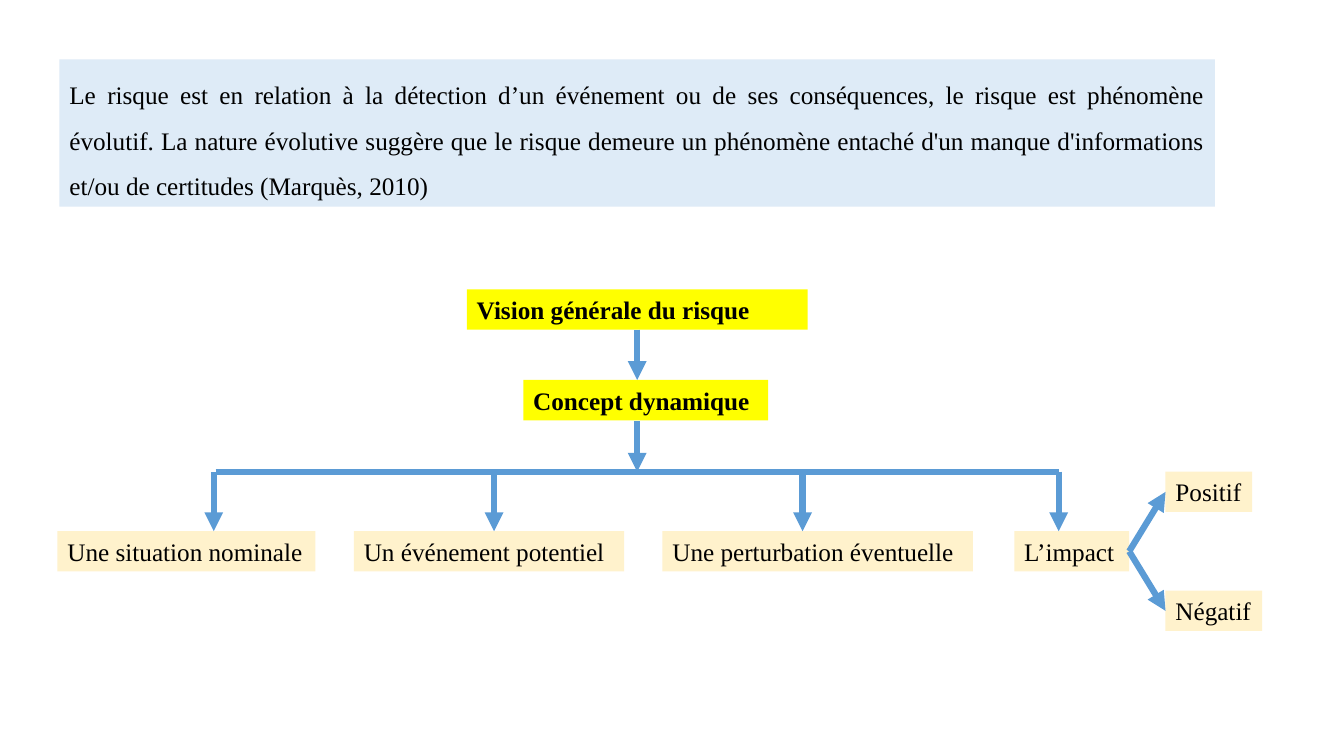
from pptx import Presentation
from pptx.dml.color import RGBColor
from pptx.enum.shapes import MSO_CONNECTOR
from pptx.enum.text import MSO_AUTO_SIZE, PP_ALIGN
from pptx.oxml.ns import qn
from pptx.util import Inches, Pt
from lxml.etree import SubElement

COLORS = {
    "intro": "DEEBF7",
    "concept": "FFFF00",
    "factor": "FFF2CC",
    "line": "5B9BD5",
    "text": "000000",
}
FONT = "Times New Roman"
BOX_H = 0.4
BAR_Y = 4.68
FACTOR_Y = 5.27
TRUNK_X = 6.32

INTRO = (
    "Le risque est en relation à la détection d’un événement ou de ses conséquences, "
    "le risque est phénomène évolutif. La nature évolutive suggère que le risque demeure "
    "un phénomène entaché d'un manque d'informations et/ou de certitudes (Marquès, 2010)"
)
# text, left, width, x of the arrow from the bar
FACTORS = [
    ("Une situation nominale", 0.57, 2.56, 2.12),
    ("Un événement potentiel", 3.51, 2.68, 4.9),
    ("Une perturbation éventuelle", 6.57, 3.08, 7.96),
    ("L’impact", 10.06, 1.14, 10.5),
]
# text, top, width
OUTCOMES = [("Positif", 4.68, 0.86), ("Négatif", 5.86, 0.96)]


def add_box(s, text, x, y, w, h=BOX_H, fill="factor", bold=False, wrap=False):
    box = s.shapes.add_textbox(Inches(x), Inches(y), Inches(w), Inches(h))
    box.fill.solid()
    box.fill.fore_color.rgb = RGBColor.from_string(COLORS[fill])
    tf = box.text_frame
    tf.word_wrap = wrap
    tf.auto_size = MSO_AUTO_SIZE.SHAPE_TO_FIT_TEXT
    tf.text = text
    font = tf.paragraphs[0].runs[0].font
    font.name = FONT
    font.size = Pt(18)
    font.bold = bold
    font.color.rgb = RGBColor.from_string(COLORS["text"])
    return box


def add_line(s, x1, y1, x2, y2, arrow=True):
    line = s.shapes.add_connector(
        MSO_CONNECTOR.STRAIGHT, Inches(x1), Inches(y1), Inches(x2), Inches(y2)
    )
    line.line.color.rgb = RGBColor.from_string(COLORS["line"])
    line.line.width = Pt(4.5)
    if arrow:
        SubElement(line.line._get_or_add_ln(), qn("a:tailEnd"), type="triangle")
    SubElement(line._element.spPr, qn("a:effectLst"))
    return line


def add_intro(s):
    box = add_box(s, INTRO, 0.59, 0.59, 11.46, 1.46, fill="intro", wrap=True)
    p = box.text_frame.paragraphs[0]
    p.alignment = PP_ALIGN.JUSTIFY
    p.line_spacing = 1.5
    p.space_after = Pt(8)


def add_trunk(s):
    vision = add_box(s, "Vision générale du risque", 4.63, 2.87, 3.38,
                     fill="concept", bold=True, wrap=True)
    add_box(s, "Concept dynamique", 5.19, 3.77, 2.43, fill="concept", bold=True)
    add_line(s, TRUNK_X, 3.27, TRUNK_X, 3.77).begin_connect(vision, 2)
    add_line(s, TRUNK_X, 4.18, TRUNK_X, BAR_Y)


def add_factors(s):
    """Draw the bar and its four branches; return the last box."""
    add_line(s, 2.14, BAR_Y, 10.5, BAR_Y, arrow=False)
    for text, x, w, arrow_x in FACTORS:
        box = add_box(s, text, x, FACTOR_Y, w)
        add_line(s, arrow_x, BAR_Y, arrow_x, FACTOR_Y)
    return box


def add_outcomes(s, impact):
    for text, y, w in OUTCOMES:
        box = add_box(s, text, 11.56, y, w)
        arrow = add_line(s, 11.2, FACTOR_Y + BOX_H / 2, 11.56, y + BOX_H / 2)
        arrow.begin_connect(impact, 3)
        arrow.end_connect(box, 1)


def main():
    prs = Presentation()
    prs.slide_width = Inches(13.33)
    prs.slide_height = Inches(7.5)
    s = prs.slides.add_slide(prs.slide_layouts[6])
    add_intro(s)
    add_trunk(s)
    impact = add_factors(s)
    add_outcomes(s, impact)
    prs.save("out.pptx")


if __name__ == "__main__":
    main()
